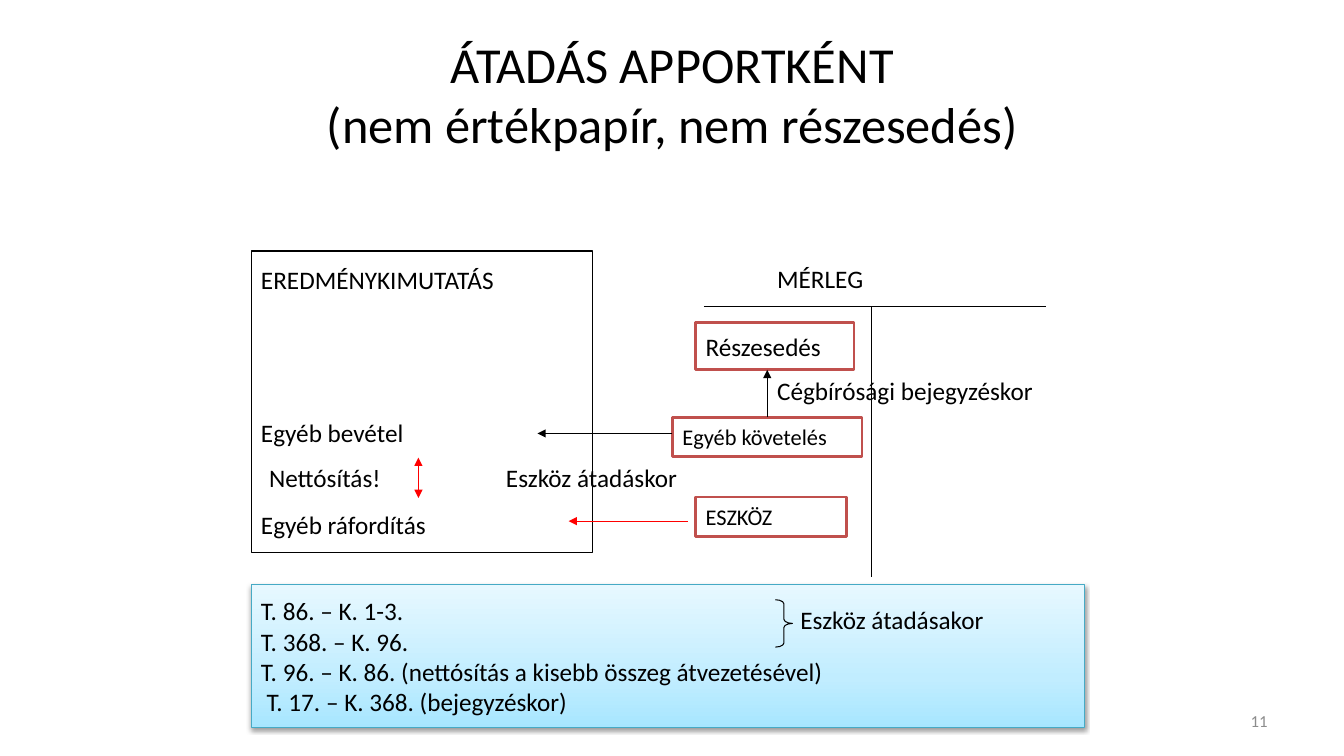
from copy import deepcopy
from lxml.etree import SubElement
from pptx import Presentation
from pptx.dml.color import RGBColor
from pptx.enum.shapes import MSO_CONNECTOR, MSO_SHAPE
from pptx.enum.text import MSO_ANCHOR, PP_ALIGN
from pptx.oxml.ns import qn
from pptx.util import Inches, Pt

BLACK = RGBColor(0, 0, 0)
WHITE = RGBColor(255, 255, 255)
RED = RGBColor(255, 0, 0)
BRICK = RGBColor(0xC0, 0x50, 0x4D)
TEAL = RGBColor(0x46, 0xAA, 0xC5)
GRAY = RGBColor(0x8C, 0x8C, 0x8C)
SKY = [(0, RGBColor(0xA7, 0xE6, 0xFF)), (0.35, RGBColor(0xC1, 0xED, 0xFF)),
       (1, RGBColor(0xE7, 0xF8, 0xFF))]

TITLE = ["ÁTADÁS APPORTKÉNT", "(nem értékpapír, nem részesedés)"]
INCOME = [("EREDMÉNYKIMUTATÁS", 0), ("Egyéb bevétel", 88), ("Egyéb ráfordítás", 66 - 22)]
ENTRIES = [("T. 86. – K. 1-3.", 0), ("T. 368. – K. 96.", 0),
           ("T. 96. – K. 86. (nettósítás a kisebb összeg átvezetésével)", 0),
           (" T. 17. – K. 368. (bejegyzéskor)", 0)]
ASSETS = [("Részesedés", 18, (6.9, 3.2, 1.57, 0.47)),
          ("ESZKÖZ", 16, (6.9, 4.93, 1.5, 0.39)),
          ("Egyéb követelés", 16, (6.67, 4.14, 1.88, 0.39))]
LABELS = [("MÉRLEG", (7.61, 2.57, 1.97, 0.39)),
          ("Cégbírósági bejegyzéskor", (7.61, 3.67, 2.77, 0.4)),
          ("Eszköz átadáskor", (4.92, 4.54, 1.91, 0.4)),
          ("Eszköz átadásakor", (7.84, 5.95, 2.03, 0.4)),
          ("Nettósítás!", (2.57, 4.54, 1.32, 0.4))]
LEDGER = [(6.98, 3.04, 10.37, 3.04), (8.64, 3.04, 8.64, 5.72)]
ARROWS = [((6.82, 5.17, 5.64, 5.17), RED, ["tailEnd"]),
          ((6.67, 4.3, 5.33, 4.3), BLACK, ["tailEnd"]),
          ((4.15, 4.94, 4.15, 4.54), RED, ["headEnd", "tailEnd"])]
RISE = (7.61, 4.14, 7.61, 3.67)


def write(shape, lines, size=18, color=BLACK, align=PP_ALIGN.LEFT, wrap=False):
    """Fill a shape with lines given as (text, space before)."""
    frame = shape.text_frame
    frame.word_wrap = wrap
    frame.vertical_anchor = MSO_ANCHOR.MIDDLE
    for i, (text, gap) in enumerate(lines):
        para = frame.add_paragraph() if i else frame.paragraphs[0]
        para.alignment = align
        para.space_before = Pt(gap)
        run = para.add_run()
        run.text = text
        run.font.size = Pt(size)
        run.font.name = "Calibri"
        run.font.color.rgb = color


def draw(slide, kind, area, line, width, fill=None):
    """Add a preset shape without shadow."""
    shape = slide.shapes.add_shape(kind, *map(Inches, area))
    shape.shadow.inherit = False
    shape.line.color.rgb = line
    shape.line.width = Pt(width)
    if fill is None:
        shape.fill.background()
    else:
        shape.fill.solid()
        shape.fill.fore_color.rgb = fill
    return shape


def label(slide, area, text, **style):
    """Add a text box holding one line."""
    write(slide.shapes.add_textbox(*map(Inches, area)), [(text, 0)], **style)


def link(slide, ends, color=BLACK, tips=()):
    """Add a straight line with optional arrowheads."""
    line = slide.shapes.add_connector(MSO_CONNECTOR.STRAIGHT, *map(Inches, ends))
    line.line.color.rgb = color
    line.line.width = Pt(0.75)
    props = line._element.spPr
    for tip in tips:
        SubElement(props.find(qn("a:ln")), qn("a:" + tip), type="triangle")
    SubElement(props, qn("a:effectLst"))
    return line


def shade(shape):
    """Give a shape the sky gradient and a soft shadow below."""
    shape.fill.gradient()
    shape.fill.gradient_angle = 90
    props = shape._element.spPr
    stops = props.find(qn("a:gradFill")).find(qn("a:gsLst"))
    stops.append(deepcopy(stops[-1]))
    for stop, (place, color) in zip(shape.fill.gradient_stops, SKY):
        stop.position = place
        stop.color.rgb = color
    cast = SubElement(props.find(qn("a:effectLst")), qn("a:outerShdw"), blurRad=str(Pt(3.1)),
                      dist=str(Pt(1.6)), dir="5400000", rotWithShape="0")
    tone = SubElement(cast, qn("a:srgbClr"), val="000000")
    SubElement(tone, qn("a:alpha"), val="38000")


def main():
    """Build the slide and save it."""
    deck = Presentation()
    deck.slide_width, deck.slide_height = Inches(13.33), Inches(7.5)
    slide = deck.slides.add_slide(deck.slide_layouts[5])

    title = slide.shapes.title
    title.left, title.top, title.width, title.height = map(Inches, (0.67, 0.3, 12, 1.25))
    write(title, [(TITLE[0], 0)], size=36, align=PP_ALIGN.CENTER, wrap=True)
    para = title.text_frame.paragraphs[0]
    para.add_line_break()
    run = para.add_run()
    run.text = TITLE[1]
    run.font.size = Pt(36)
    run.font.name = "Calibri"
    run.font.color.rgb = BLACK

    income = draw(slide, MSO_SHAPE.RECTANGLE, (2.49, 2.49, 3.39, 2.99), BLACK, 0.75)
    write(income, INCOME)
    for ends in LEDGER:
        link(slide, ends)

    entries = draw(slide, MSO_SHAPE.RECTANGLE, (2.49, 5.8, 8.27, 1.42), TEAL, 0.75)
    shade(entries)
    write(entries, ENTRIES)

    for text, size, area in ASSETS:
        asset = draw(slide, MSO_SHAPE.RECTANGLE, area, BRICK, 2, WHITE)
        write(asset, [(text, 0)], size=size)
    link(slide, RISE, tips=["tailEnd"]).begin_connect(asset, 0)
    for ends, color, tips in ARROWS:
        link(slide, ends, color, tips)

    brace = draw(slide, MSO_SHAPE.RIGHT_BRACE, (7.69, 5.95, 0.17, 0.47), BLACK, 0.75)
    brace.adjustments[0] = 0.24
    for text, area in LABELS:
        label(slide, area, text)
    label(slide, (9.56, 6.95, 3.11, 0.4), "11", size=12, color=GRAY,
          align=PP_ALIGN.RIGHT, wrap=True)
    deck.save("out.pptx")


if __name__ == "__main__":
    main()
